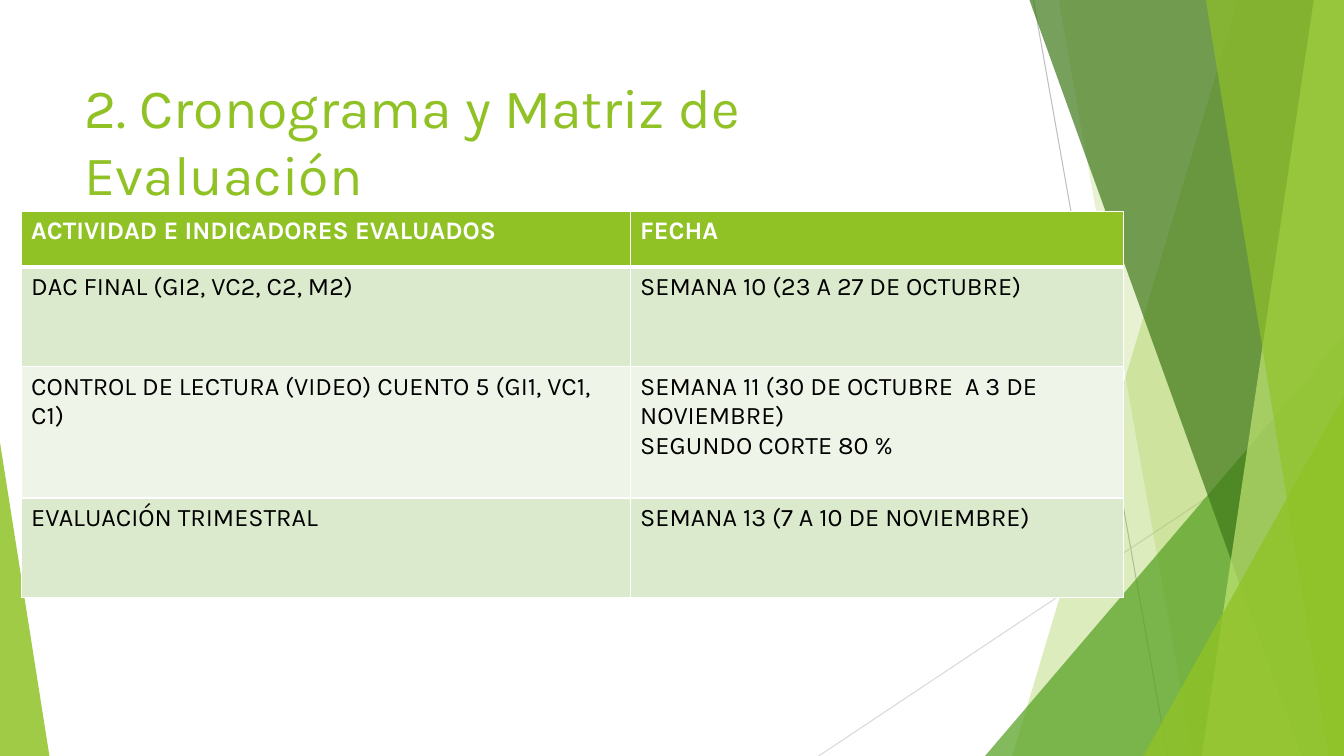
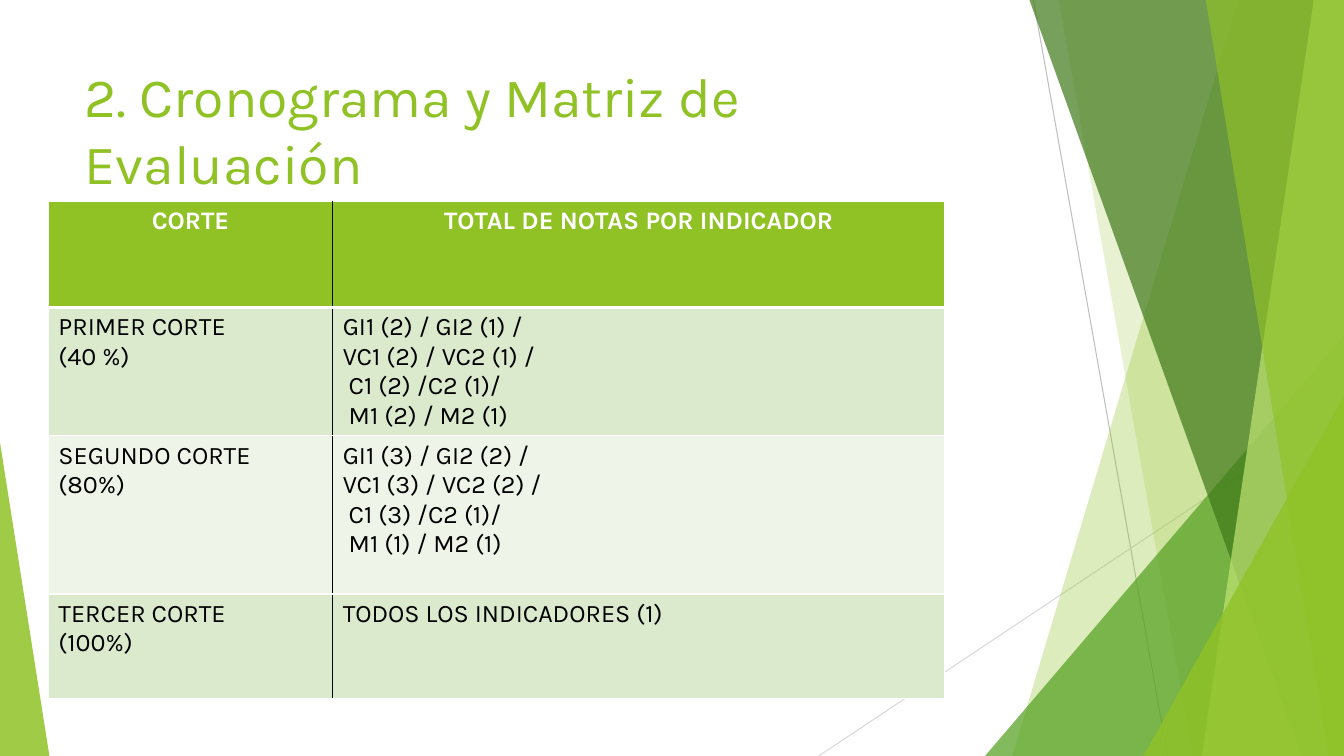
"""Builds two slides with the evaluation schedule and the grade matrix."""
from pptx import Presentation
from pptx.dml.color import RGBColor as Rgb
from pptx.enum.shapes import MSO_CONNECTOR as Connector, MSO_SHAPE as Preset
from pptx.enum.text import MSO_ANCHOR as Anchor, MSO_AUTO_SIZE as AutoSize, PP_ALIGN as Align
from pptx.oxml import parse_xml
from pptx.oxml.ns import nsdecls, qn
from pptx.util import Inches, Pt


class Theme:
    lime, green, forest, pale = "90C226", "54A021", "3F7819", "C0E474"
    white, black = "FFFFFF", "000000"
    bands = ("DBE9CD", "EEF4E8")
    hairlines = ("BFBFBF", "D9D9D9")
    title = {"name": "Karla", "size": Pt(39.6), "bold": False}
    header = {"name": "Karla", "size": Pt(18), "bold": True}
    body = {"name": "Karla", "size": Pt(18), "bold": False}


def style_text(frame, values, color, alignment):
    for paragraph in frame.paragraphs:
        paragraph.alignment = alignment
        for run in paragraph.runs:
            for key, value in values.items():
                setattr(run.font, key, value)
            run.font.color.rgb = Rgb.from_string(color)


def paint(facet, color, opacity):
    facet.shadow.inherit = False
    facet.line.fill.background()
    facet.fill.solid()
    facet.fill.fore_color.rgb = Rgb.from_string(color)
    tint = facet.element.spPr.find(qn("a:solidFill"))[0]
    tint.append(parse_xml(f'<a:alpha {nsdecls("a")} val="{opacity * 1000}"/>'))


deck = Presentation()
deck.slide_width, deck.slide_height = Inches(13.33), Inches(7.5)
layout = deck.slide_layouts[5]
for placeholder in list(layout.placeholders)[1:]:
    placeholder.element.getparent().remove(placeholder.element)

title_box = {"left": Inches(0.74), "top": Inches(0.67), "width": Inches(9.4)}
for key, value in {**title_box, "height": Inches(1.43)}.items():
    setattr(layout.placeholders[0], key, value)

pages = [
    {
        "title_height": 1.43,
        "corner": (0.21, 2.1),
        "columns": (6.04, 4.89),
        "rows": (0.55, 0.99, 1.3, 0.99),
        "divider": Theme.white,
        "header_align": Align.LEFT,
        "content": [
            ("ACTIVIDAD E INDICADORES EVALUADOS", "FECHA"),
            ("DAC FINAL (GI2, VC2, C2, M2)", "SEMANA 10 (23 A 27 DE OCTUBRE)"),
            ("CONTROL DE LECTURA (VIDEO) CUENTO 5 (GI1, VC1, C1)",
             "SEMANA 11 (30 DE OCTUBRE  A 3 DE NOVIEMBRE)\nSEGUNDO CORTE 80 %"),
            ("EVALUACIÓN TRIMESTRAL", "SEMANA 13 (7 A 10 DE NOVIEMBRE)"),
        ],
    },
    {
        "title_height": 1.22,
        "corner": (0.48, 2),
        "columns": (2.82, 6.07),
        "rows": (1.05, 1.27, 1.57, 1.04),
        "divider": Theme.black,
        "header_align": Align.CENTER,
        "content": [
            ("CORTE", "TOTAL DE NOTAS POR INDICADOR"),
            ("PRIMER CORTE\n(40 %)",
             "GI1 (2) / GI2 (1) /\nVC1 (2) / VC2 (1) /\n C1 (2) /C2 (1)/\n M1 (2) / M2 (1)"),
            ("SEGUNDO CORTE\n(80%)",
             "GI1 (3) / GI2 (2) /\nVC1 (3) / VC2 (2) /\n C1 (3) /C2 (1)/\n M1 (1) / M2 (1)"),
            ("TERCER CORTE\n(100%)", "TODOS LOS INDICADORES (1)"),
        ],
    },
]

for page in pages:
    slide = deck.slides.add_slide(layout)
    title = slide.shapes.title
    for key, value in {**title_box, "height": Inches(page["title_height"])}.items():
        setattr(title, key, value)
    title.text_frame.text = "2. Cronograma y Matriz de Evaluación"
    frame_format = {"word_wrap": True, "auto_size": AutoSize.NONE, "vertical_anchor": Anchor.MIDDLE}
    for key, value in frame_format.items():
        setattr(title.text_frame, key, value)
    style_text(title.text_frame, Theme.title, Theme.lime, Align.LEFT)

    columns, rows = page["columns"], page["rows"]
    left, top = page["corner"]
    matrix = slide.shapes.add_table(
        len(rows), len(columns), Inches(left), Inches(top), Inches(sum(columns)), Inches(sum(rows))
    ).table
    matrix.first_row = matrix.horz_banding = False
    for column, width in zip(matrix.columns, columns):
        column.width = Inches(width)
    for row, height in zip(matrix.rows, rows):
        row.height = Inches(height)

    for r, entries in enumerate(page["content"]):
        for c, entry in enumerate(entries):
            cell = matrix.cell(r, c)
            cell.text = entry
            if r == 0:
                style_text(cell.text_frame, Theme.header, Theme.white, page["header_align"])
            else:
                style_text(cell.text_frame, Theme.body, Theme.black, Align.LEFT)
            edges = {
                "L": (page["divider"] if c > 0 else Theme.white, 1),
                "R": (page["divider"] if c == 0 else Theme.white, 1),
                "T": (Theme.white, 3 if r == 1 else 1),
                "B": (Theme.white, 3 if r == 0 else 1),
            }
            properties = cell._tc.get_or_add_tcPr()
            for side, (color, weight) in edges.items():
                properties.append(parse_xml(
                    f'<a:ln{side} {nsdecls("a")} w="{Pt(weight)}"><a:solidFill>'
                    f'<a:srgbClr val="{color}"/></a:solidFill></a:ln{side}>'))
            cell.fill.solid()
            cell.fill.fore_color.rgb = Rgb.from_string(
                Theme.lime if r == 0 else Theme.bands[(r - 1) % 2])

canvas = deck.slides[0].shapes
backdrop = []
hairline_ends = [(10.25, 0, 11.58, 7.5), (13.33, 4.03, 8.12, 7.5)]
for ends, color in zip(hairline_ends, Theme.hairlines):
    hairline = canvas.add_connector(Connector.STRAIGHT, *map(Inches, ends))
    hairline.line.color.rgb = Rgb.from_string(color)
    hairline.line.width = Pt(0.75)
    hairline.element.spPr.append(parse_xml(f'<a:effectLst {nsdecls("a")}/>'))
    backdrop.append(hairline)

facets = [
    ("band", (12.28, 13.33, 10.04), Theme.lime, 30),
    ("band", (10.5, 13.33, 11.83), Theme.lime, 20),
    ("triangle", (9.77, 3.33, 3.56, 4.17, 1), Theme.green, 72),
    ("band", (10.21, 13.33, 12.91), Theme.forest, 70),
    ("band", (13.03, 13.33, 11.92), Theme.pale, 70),
    ("band", (11.96, 13.33, 13.18), Theme.lime, 65),
    ("triangle", (11.34, 3.93, 1.99, 3.57, 1), Theme.lime, 80),
    ("triangle", (0, 4.39, 0.49, 3.11, 0), Theme.lime, 85),
]
for kind, geometry, color, opacity in facets:
    if kind == "band":
        top_left, right, bottom_left = map(Inches, geometry)
        outline = canvas.build_freeform(top_left, 0)
        outline.add_line_segments(
            [(right, 0), (right, deck.slide_height), (bottom_left, deck.slide_height)], close=True)
        facet = outline.convert_to_shape()
    else:
        *box, apex = geometry
        facet = canvas.add_shape(Preset.ISOSCELES_TRIANGLE, *map(Inches, box))
        facet.adjustments[0] = apex
    paint(facet, color, opacity)
    backdrop.append(facet)

for piece in backdrop:
    layout.element.cSld.spTree.append(piece.element)

deck.save("out.pptx")
